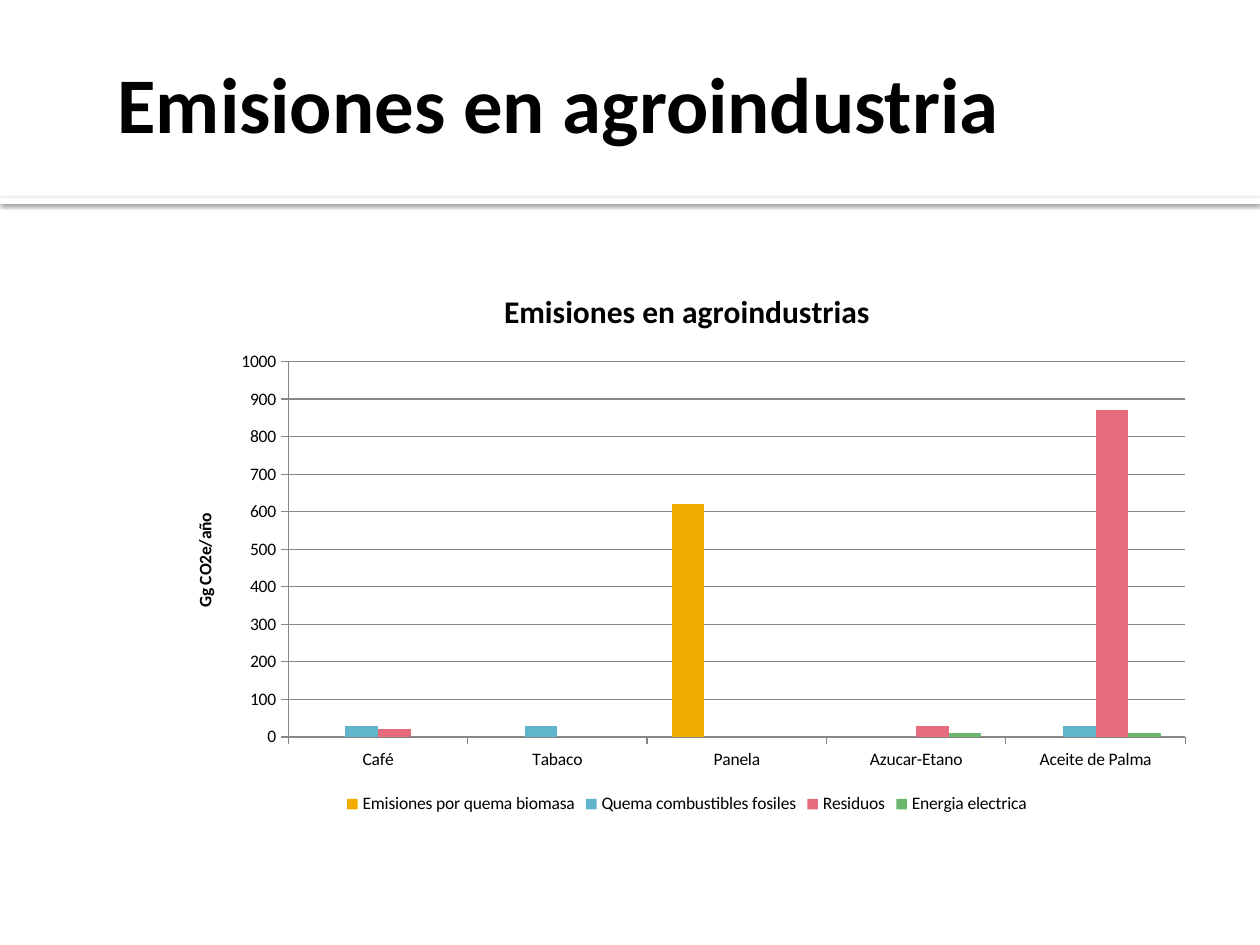
from lxml import etree
from pptx import Presentation
from pptx import util as u
from pptx.chart.data import CategoryChartData
from pptx.dml.color import RGBColor
from pptx.enum import chart as ch, shapes, text
from pptx.oxml.ns import qn

PX = 914400 / 126  # EMU in one pixel


def px(*lengths):
    return [u.Emu(round(n * PX)) for n in lengths]


def rgb(value):
    return RGBColor.from_string(value)


class Deck:
    FONT, INK, PAPER, GRID = "Calibri", "000000", "FFFFFF", "878787"

    def __init__(self, width, height):
        self.prs = Presentation()
        self.prs.slide_width, self.prs.slide_height = px(width, height)
        self.s = self.prs.slides.add_slide(self.prs.slide_layouts[5])

    def style(self, font, size, bold=False):
        font.name, font.size, font.bold = self.FONT, u.Pt(size), bold
        font.color.rgb = rgb(self.INK)

    def place(self, sp, box):
        sp.left, sp.top, sp.width, sp.height = px(*box)

    def title(self, words, box, size):
        sp = self.s.shapes.title
        self.place(sp, box)
        tf = sp.text_frame
        tf.text = words
        tf.word_wrap = True
        tf.auto_size = text.MSO_AUTO_SIZE.NONE
        tf.vertical_anchor = text.MSO_ANCHOR.MIDDLE
        tf.margin_left = u.Inches(0.1)
        tf.margin_top = tf.margin_right = tf.margin_bottom = u.Inches(0.05)
        p = tf.paragraphs[0]
        p.alignment = text.PP_ALIGN.LEFT
        self.style(p.font, size, True)

    def band(self, box):
        sp = self.s.shapes.add_shape(shapes.MSO_SHAPE.RECTANGLE, *px(*box))
        sp.fill.solid()
        sp.fill.fore_color.rgb = rgb(self.PAPER)
        sp.line.fill.background()
        sp.shadow.inherit = False
        # Soft shadow falling straight down
        effects = sp._element.spPr.find(qn("a:effectLst"))
        shadow = etree.SubElement(
            effects, qn("a:outerShdw"), blurRad=str(u.Pt(2.5)),
            dist=str(u.Pt(0.8)), dir="5400000", algn="tl", rotWithShape="0")
        color = etree.SubElement(shadow, qn("a:srgbClr"), val=self.INK)
        etree.SubElement(color, qn("a:alpha"), val="60000")

    def heading(self, owner, words, size):
        tf = owner.text_frame
        tf.text = words
        self.style(tf.paragraphs[0].font, size, True)

    def columns(self, box, title, unit, categories, series):
        data = CategoryChartData()
        data.categories = categories
        for name, _, values in series:
            data.add_series(name, values)
        chart = self.s.shapes.add_chart(
            ch.XL_CHART_TYPE.COLUMN_CLUSTERED, *px(*box), data).chart
        self.style(chart.font, 10)
        chart.has_title = True
        self.heading(chart.chart_title, title, 18)

        # Columns
        plot = chart.plots[0]
        plot.gap_width, plot.overlap = 150, 0
        plot.vary_by_categories = False
        for column, (_, color, _) in zip(plot.series, series):
            column.format.fill.solid()
            column.format.fill.fore_color.rgb = rgb(color)

        # Axes
        value = chart.value_axis
        value.minimum_scale, value.maximum_scale, value.major_unit = 0, 1000, 100
        value.has_major_gridlines = True
        self.heading(value.axis_title, unit, 10)
        for axis in (chart.category_axis, value):
            axis.major_tick_mark = ch.XL_TICK_MARK.OUTSIDE
        for part in (chart.category_axis, value, value.major_gridlines):
            part.format.line.color.rgb = rgb(self.GRID)
            part.format.line.width = u.Pt(0.75)

        # Legend
        chart.has_legend = True
        chart.legend.position = ch.XL_LEGEND_POSITION.BOTTOM
        chart.legend.include_in_layout = False


def main():
    deck = Deck(1260, 945)

    # Header
    deck.band((0, 198, 1260, 6))
    deck.title("Emisiones en agroindustria", (105, 16, 1029, 173), 45)

    # Emissions by crop and source
    deck.columns(
        (168, 266, 1038, 553), "Emisiones en agroindustrias", "Gg CO2e/año",
        ["Café", "Tabaco", "Panela", "Azucar-Etano", "Aceite de Palma"],
        [("Emisiones por quema biomasa", "F0AD00", (None, None, 620, None, None)),
         ("Quema combustibles fosiles", "60B5CC", (30, 30, None, None, 30)),
         ("Residuos", "E66C7D", (20, None, None, 30, 870)),
         ("Energia electrica", "6BB76D", (None, None, None, 10, 10))])

    deck.prs.save("out.pptx")


if __name__ == "__main__":
    main()
